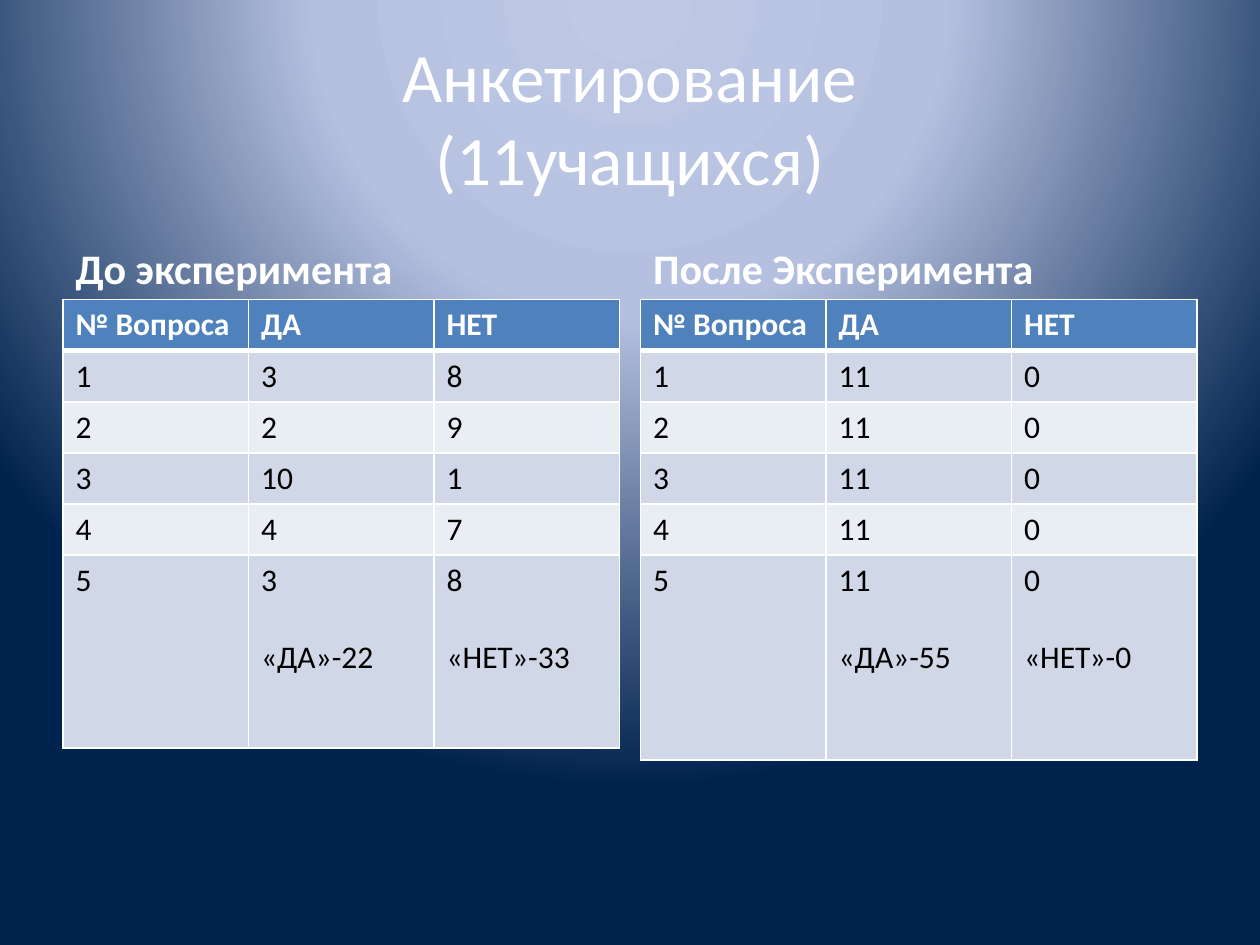
"""Build the slide comparing survey answers before and after the experiment."""
from dataclasses import dataclass

from pptx import Presentation
from pptx.dml.color import RGBColor as RGB
from pptx.enum.text import MSO_ANCHOR as Anchor, MSO_AUTO_SIZE as AutoSize, PP_ALIGN as Align
from pptx.oxml import parse_xml
from pptx.oxml.ns import nsdecls
from pptx.util import Pt


@dataclass(frozen=True)
class Theme:
    """Colours, font and type sizes."""
    font: str = "Calibri"
    light: str = "FFFFFF"
    dark: str = "000000"
    header: str = "4F81BD"
    bands: tuple = ("D0D8E8", "E9EDF4")
    glow: tuple = ((0, "BFC9E5"), (40, "B5C0E0"), (100, "00234D"))
    title: float = 39.6
    heading: float = 24
    cell: float = 18
    thin: float = 1
    thick: float = 3


def write(p, text, *, font, size, color, bold=False, align=None, before=None):
    """Put formatted text into a paragraph."""
    p.text = text
    p.alignment = align
    if before is not None:
        p.space_before = Pt(before)
    for r in p.runs:
        r.font.name, r.font.size, r.font.bold = font, Pt(size), bold
        r.font.color.rgb = RGB.from_string(color)


class Deck:
    """Hold the theme and the current slide."""

    def __init__(self, prs, theme):
        """Add a comparison slide without its content placeholders."""
        self.th = theme
        self.s = prs.slides.add_slide(prs.slide_layouts[4])
        self.ph = {sp.placeholder_format.idx: sp for sp in self.s.placeholders}
        for idx, sp in self.ph.items():
            if idx not in (0, 1, 3):
                sp.element.getparent().remove(sp.element)

    def background(self):
        """Set the radial gradient centred above the slide."""
        stops = "".join(f'<a:gs pos="{pos * 1000}"><a:srgbClr val="{color}"/></a:gs>'
                        for pos, color in self.th.glow)
        self.s.element.cSld.insert(0, parse_xml(
            f'<p:bg {nsdecls("p", "a")}><p:bgPr><a:gradFill rotWithShape="1">'
            f'<a:gsLst>{stops}</a:gsLst><a:path path="circle">'
            '<a:fillToRect l="50000" t="-80000" r="50000" b="180000"/></a:path>'
            '</a:gradFill><a:effectLst/></p:bgPr></p:bg>'))

    def text(self, idx, text, box, *, size, anchor, **fmt):
        """Move and fill a placeholder."""
        sp = self.ph[idx]
        sp.left, sp.top, sp.width, sp.height = map(Pt, box)
        tf = sp.text_frame
        tf.auto_size, tf.vertical_anchor, tf.word_wrap = AutoSize.NONE, anchor, True
        write(tf.paragraphs[0], text, font=self.th.font, size=size, color=self.th.light, **fmt)

    def borders(self, cell, row):
        """Draw cell borders, thick under the header row."""
        tc_pr = cell._tc.get_or_add_tcPr()
        for i, side in enumerate("LRTB"):
            thick = (row, side) in ((0, "B"), (1, "T"))
            width = Pt(self.th.thick if thick else self.th.thin)
            tc_pr.insert(i, parse_xml(
                f'<a:ln{side} {nsdecls("a")} w="{width}"><a:solidFill>'
                f'<a:srgbClr val="{self.th.light}"/></a:solidFill></a:ln{side}>'))

    def table(self, rows, box, *, row_height):
        """Add a banded table whose last row takes the remaining height."""
        th, last = self.th, len(rows) - 1
        table = self.s.shapes.add_table(len(rows), len(rows[0]), *map(Pt, box)).table
        for i, values in enumerate(rows):
            table.rows[i].height = Pt(box[3] - row_height * last if i == last else row_height)
            fill = th.bands[(i - 1) % 2] if i else th.header
            for j, value in enumerate(values):
                cell = table.cell(i, j)
                cell.fill.solid()
                cell.fill.fore_color.rgb = RGB.from_string(fill)
                self.borders(cell, i)
                tf = cell.text_frame
                for k, line in enumerate(value.split("\n")):
                    p = tf.add_paragraph() if k else tf.paragraphs[0]
                    write(p, line, font=th.font, size=th.cell, bold=i == 0,
                          color=th.dark if i else th.light, before=22 if k else None)


def main():
    """Build and save the slide."""
    prs = Presentation()
    prs.slide_width, prs.slide_height = Pt(720), Pt(540)
    th = Theme()
    deck = Deck(prs, th)
    deck.background()
    deck.text(0, "Анкетирование\v(11учащихся)", (36, 21.6, 648, 90),
              size=th.title, anchor=Anchor.MIDDLE, align=Align.CENTER)
    groups = (
        (1, "До эксперимента", 256.3, ("3", "2", "10", "4", "3\n«ДА»-22"),
         ("8", "9", "1", "7", "8\n«НЕТ»-33")),
        (3, "После Эксперимента", 263, ("11",) * 4 + ("11\n«ДА»-55",),
         ("0",) * 4 + ("0\n«НЕТ»-0",)),
    )
    width, top, gap = 318, 171.25, 12
    for n, (idx, heading, height, yes, no) in enumerate(groups):
        left = 36 + n * (width + gap)
        deck.text(idx, heading, (left, top - 50.4, width, 50.4),
                  size=th.heading, anchor=Anchor.BOTTOM, bold=True)
        rows = [("№ Вопроса", "ДА", "НЕТ"), *zip("12345", yes, no)]
        deck.table(rows, (left, top, width, height), row_height=29.2)
    prs.save("out.pptx")


if __name__ == "__main__":
    main()
